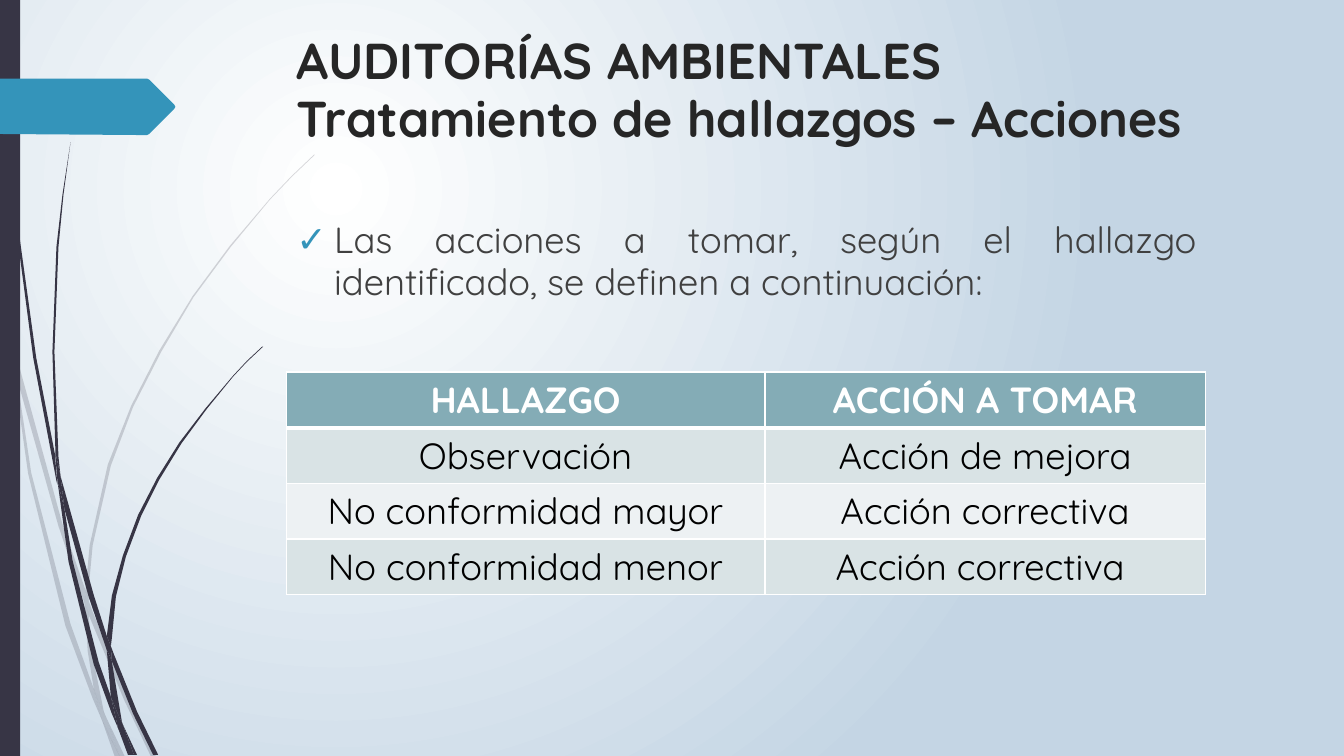
import pptx
import pptx.util
import pptx.oxml
import pptx.oxml.ns
import pptx.dml.color
import pptx.enum.shapes
import pptx.enum.text

Pt = pptx.util.Pt
ALIGN = pptx.enum.text.PP_ALIGN
NS = pptx.oxml.ns.nsdecls("a", "p")
GRID = 0.72  # outline unit in points

COLORS = {
    "white": "FFFFFF", "sky": "C4D5E4", "dark": "373545", "blue": "3494BA",
    "title": "262626", "body": "404040", "black": "000000",
    "header": "84ACB6", "band1": "D9E3E5", "band2": "EDF1F3",
}

# Outlines of the grass blades, in grid units
PALE_BLADES = [
    [(11, 350), (9, 322), (0, 282), (0, 299), (10, 344)],
    [(58, 522), (84, 599), (85, 586), (62, 520), (14, 345), (17, 376)],
    [(92, 607), (88, 596), (88, 610), (123, 694), (150, 751), (155, 751), (127, 692)],
    [(119, 751), (124, 751), (105, 711)],
    [(93, 683), (70, 619), (31, 469), (17, 376), (11, 350), (28, 470), (65, 621),
     (92, 693), (101, 714), (99, 707)],
    [(84, 599), (87, 646), (93, 683), (96, 692), (105, 711), (103, 706), (91, 646),
     (88, 610), (88, 608)],
    [(88, 584), (92, 541), (110, 462), (132, 404), (160, 349), (192, 295), (229, 245),
     (268, 198), (290, 175), (312, 154), (312, 153), (289, 175), (268, 197),
     (228, 244), (191, 294), (158, 348), (130, 403), (107, 461), (89, 541),
     (85, 584), (85, 586), (88, 596)],
    [(101, 714), (114, 751), (119, 751)],
    [(88, 608), (88, 610), (88, 596), (85, 586), (84, 599)],
    [(96, 692), (93, 683), (99, 707), (101, 714), (119, 751), (105, 711)],
]
DARK_BLADES = [
    [(7, 110), (17, 233), (33, 355), (56, 477), (57, 481), (55, 457), (55, 453),
     (36, 355), (19, 232), (8, 109), (5, 48), (4, 0), (3, 0), (4, 48)],
    [(88, 592), (106, 645), (106, 633), (106, 631), (93, 590), (60, 472), (64, 505)],
    [(113, 649), (110, 641), (111, 656), (132, 708), (152, 749), (157, 749), (136, 706)],
    [(110, 691), (98, 657), (72, 556), (64, 505), (57, 477), (68, 557), (93, 659),
     (111, 708), (117, 722), (116, 717)],
    [(60, 472), (58, 453), (54, 349), (58, 245), (63, 193), (70, 141), (62, 193),
     (56, 245), (52, 349), (55, 449)],
    [(133, 749), (136, 749), (122, 719)],
    [(57, 477), (64, 505), (60, 472), (55, 449), (55, 453)],
    [(111, 633), (115, 592), (125, 552), (140, 512), (158, 476), (180, 440), (205, 406),
     (231, 374), (245, 359), (261, 344), (260, 344), (245, 358), (231, 373),
     (204, 405), (178, 439), (156, 474), (137, 511), (122, 551), (111, 591),
     (106, 631), (110, 641)],
    [(117, 722), (127, 749), (131, 749)],
    [(106, 645), (110, 691), (116, 706), (122, 719), (121, 716), (111, 656), (109, 651)],
    [(106, 645), (109, 651), (111, 656), (110, 641), (106, 631)],
    [(116, 706), (110, 691), (116, 717), (117, 722), (130, 749), (133, 749), (122, 719)],
]
PAGE_ARROW = [(173, 108), (148, 133), (146, 134), (136, 134), (0, 133), (0, 78),
              (146, 78), (148, 79), (173, 104), (174, 106)]

FINDINGS = [
    ("HALLAZGO", "ACCIÓN A TOMAR"),
    ("Observación", "Acción de mejora"),
    ("No conformidad mayor", "Acción correctiva"),
    ("No conformidad menor", "Acción correctiva "),
]


def rgb(name):
    return pptx.dml.color.RGBColor.from_string(COLORS[name])


def set_attrs(obj, values):
    for name, value in values.items():
        setattr(obj, name, value)


def place(shape, left, top, width, height):
    set_attrs(shape, {"left": Pt(left), "top": Pt(top),
                      "width": Pt(width), "height": Pt(height)})


def paint(shape, color, opacity=100):
    shape.shadow.inherit = False
    shape.fill.solid()
    shape.fill.fore_color.rgb = rgb(color)
    shape.line.fill.background()
    if opacity < 100:
        clr = next(shape.element.iter(pptx.oxml.ns.qn("a:srgbClr")))
        clr.append(pptx.oxml.parse_xml(f'<a:alpha {NS} val="{opacity * 1000}"/>'))


def add_outline(shapes, points, color, opacity=100):
    fb = shapes.build_freeform(*points[0], scale=Pt(GRID))
    fb.add_line_segments(points[1:], close=True)
    paint(fb.convert_to_shape(), color, opacity)


def add_blades(s, blades, opacity):
    group = s.shapes.add_group_shape()
    for points in blades:
        add_outline(group.shapes, points, "dark", opacity)


def set_background(s):
    s.element.cSld.insert(0, pptx.oxml.parse_xml(
        f'<p:bg {NS}><p:bgPr><a:gradFill rotWithShape="1"><a:gsLst>'
        f'<a:gs pos="0"><a:srgbClr val="{COLORS["white"]}"/></a:gs>'
        f'<a:gs pos="100000"><a:srgbClr val="{COLORS["sky"]}"/></a:gs></a:gsLst>'
        '<a:path path="circle"><a:fillToRect l="50000" t="50000" r="100000" b="100000"/>'
        '</a:path></a:gradFill><a:effectLst/></p:bgPr></p:bg>'))


def write(tf, text, size, color, bold, **paragraph):
    p = tf.paragraphs[0]
    p.text = text
    set_attrs(p, paragraph)
    for r in p.runs:
        set_attrs(r.font, {"name": "Quicksand", "size": Pt(size), "bold": bold})
        r.font.color.rgb = rgb(color)
    return p


def fill_placeholder(s, shape, box, text, size, color, bold, **paragraph):
    s.shapes.element.append(shape.element)  # bring above the decoration
    place(shape, *box)
    set_attrs(shape.text_frame, {
        "word_wrap": True, "auto_size": pptx.enum.text.MSO_AUTO_SIZE.NONE,
        "vertical_anchor": pptx.enum.text.MSO_ANCHOR.TOP})
    return write(shape.text_frame, text, size, color, bold, **paragraph)


def add_bullet(p, char, color, indent):
    pPr = p._p.get_or_add_pPr()
    pPr.set("marL", str(Pt(indent)))
    pPr.set("indent", str(-Pt(indent)))
    pPr.append(pptx.oxml.parse_xml(
        f'<a:buClr {NS}><a:srgbClr val="{COLORS[color]}"/></a:buClr>'))
    pPr.append(pptx.oxml.parse_xml(f'<a:buChar {NS} char="{char}"/>'))


def set_borders(cell, widths):
    tcPr = cell._tc.get_or_add_tcPr()
    for i, (side, width) in enumerate(widths.items()):
        tcPr.insert(i, pptx.oxml.parse_xml(
            f'<a:ln{side} {NS} w="{Pt(width)}"><a:solidFill>'
            f'<a:srgbClr val="{COLORS["white"]}"/></a:solidFill></a:ln{side}>'))


def add_findings_table(s, rows, left, top, col_widths, row_height):
    table = s.shapes.add_table(len(rows), len(col_widths), Pt(left), Pt(top),
                               Pt(sum(col_widths)), Pt(row_height * len(rows))).table
    for col, width in zip(table.columns, col_widths):
        col.width = Pt(width)
    for i, row in enumerate(rows):
        head = i == 0
        for j, text in enumerate(row):
            cell = table.cell(i, j)
            cell.fill.solid()
            cell.fill.fore_color.rgb = rgb("header" if head else "band1" if i % 2 else "band2")
            set_borders(cell, {"L": 1, "R": 1, "T": 3 if i == 1 else 1, "B": 3 if head else 1})
            write(cell.text_frame, text, 26, "white" if head else "black", head,
                  alignment=ALIGN.CENTER)


def main():
    prs = pptx.Presentation()
    set_attrs(prs, {"slide_width": Pt(960), "slide_height": Pt(540)})
    s = prs.slides.add_slide(prs.slide_layouts[1])
    title, body = s.placeholders

    # Background and decoration
    set_background(s)
    add_blades(s, PALE_BLADES, 20)
    add_blades(s, DARK_BLADES, 100)
    bar = s.shapes.add_shape(pptx.enum.shapes.MSO_SHAPE.RECTANGLE, 0, 0, Pt(14.4), Pt(540))
    paint(bar, "dark")
    add_outline(s.shapes, PAGE_ARROW, "blue")

    # Title and introduction
    fill_placeholder(s, title, (204.5, 19.4, 702, 100.8),
                     "AUDITORÍAS AMBIENTALES\vTratamiento de hallazgos – Acciones",
                     36, "title", True, alignment=ALIGN.LEFT, line_spacing=0.97)
    p = fill_placeholder(s, body, (204.5, 154, 658, 81.4),
                         "Las acciones a tomar, según el hallazgo identificado, "
                         "se definen a continuación:",
                         26, "body", False, alignment=ALIGN.JUSTIFY,
                         line_spacing=0.95, space_before=Pt(10))
    add_bullet(p, "✓", "blue", 27)

    # Findings and their actions
    add_findings_table(s, FINDINGS, 204.5, 265.7, (342, 314.6), 38.4)

    prs.save("out.pptx")


if __name__ == "__main__":
    main()
